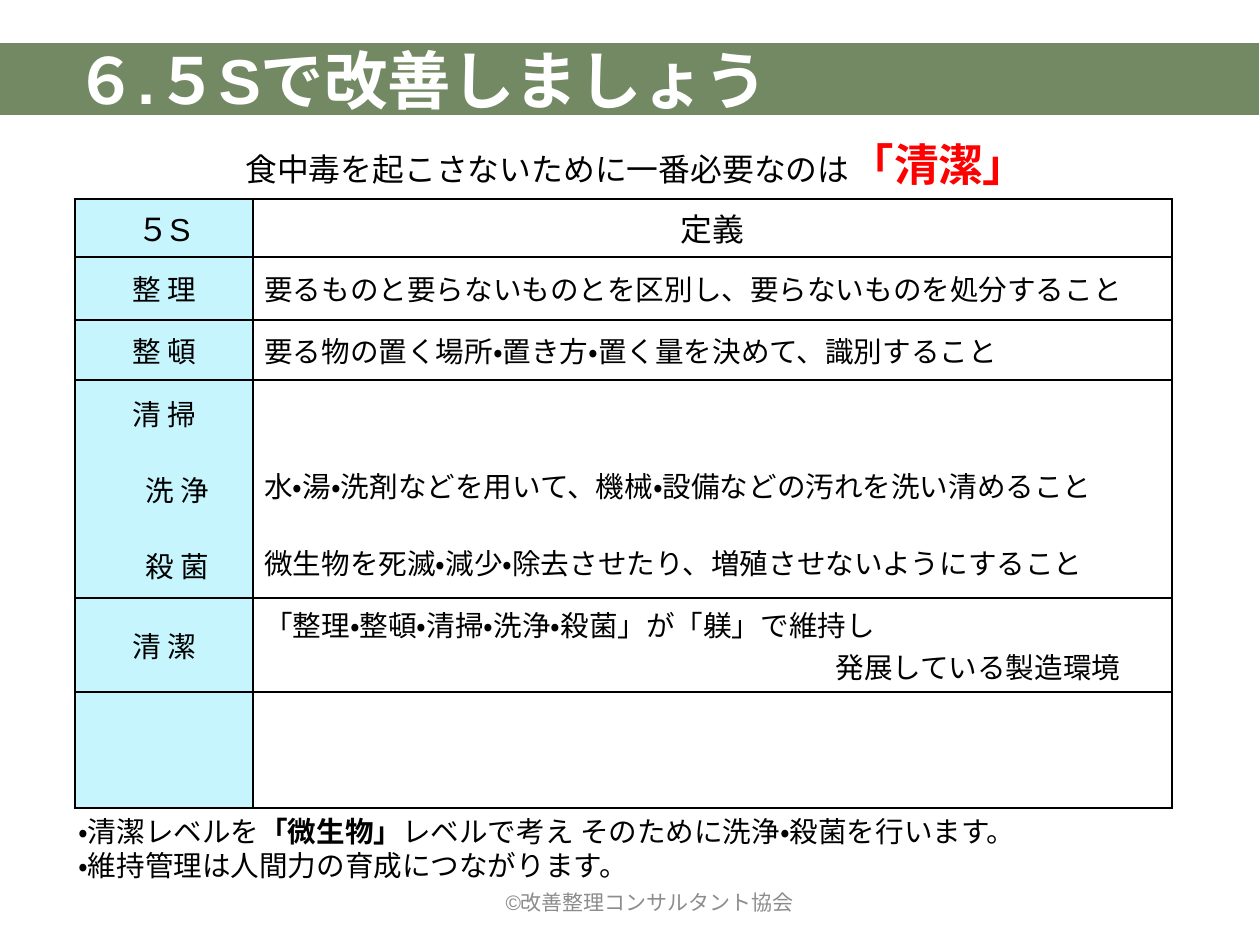
"""Build a slide that explains the five S rules of a clean workplace."""
import pptx
import pptx.dml.color
import pptx.enum.lang
import pptx.enum.text
import pptx.oxml
import pptx.oxml.ns
import pptx.util

PX = 8000
BLACK = pptx.dml.color.RGBColor(0x00, 0x00, 0x00)
WHITE = pptx.dml.color.RGBColor(0xFF, 0xFF, 0xFF)
RED = pptx.dml.color.RGBColor(0xFF, 0x00, 0x00)
GREY = pptx.dml.color.RGBColor(0x8C, 0x8C, 0x8C)
GREEN = pptx.dml.color.RGBColor(0x38, 0x57, 0x23)
PALE_BLUE = pptx.dml.color.RGBColor(0xC6, 0xF5, 0xFE)
NAMESPACE = pptx.oxml.ns.nsdecls("a")
LEFT = pptx.enum.text.PP_ALIGN.LEFT
CENTER = pptx.enum.text.PP_ALIGN.CENTER
MIDDLE = pptx.enum.text.MSO_ANCHOR.MIDDLE


def format_runs(paragraph, size, name="Calibri", color=BLACK, bold=False):
    for run in paragraph.runs:
        run.font.size = pptx.util.Pt(size)
        run.font.name = name
        run.font.bold = bold
        run.font.color.rgb = color
        run.font.language_id = pptx.enum.lang.MSO_LANGUAGE_ID.JAPANESE


def add_text(left, top, width, height):
    box = slide.shapes.add_textbox(left * PX, top * PX, width * PX, height * PX)
    box.text_frame.word_wrap = True
    return box.text_frame


presentation = pptx.Presentation()
presentation.slide_width = 1260 * PX
presentation.slide_height = 945 * PX
slide = presentation.slides.add_slide(presentation.slide_layouts[5])

title = slide.shapes.title
title.left, title.top, title.width, title.height = [n * PX for n in (-1, 43, 1260, 72)]
title.fill.solid()
title.fill.fore_color.rgb = GREEN
color_element = title.fill._xPr.find(".//" + pptx.oxml.ns.qn("a:srgbClr"))
color_element.append(pptx.oxml.parse_xml(f'<a:alpha {NAMESPACE} val="70000"/>'))
title.text_frame.text = "６.５Sで改善しましょう"
title.text_frame.auto_size = pptx.enum.text.MSO_AUTO_SIZE.NONE
title.text_frame.vertical_anchor = MIDDLE
title.text_frame.margin_left = 75 * PX
title.text_frame.paragraphs[0].alignment = LEFT
format_runs(title.text_frame.paragraphs[0], 40, "Arial", WHITE, True)

lead = add_text(234, 131, 841, 65).paragraphs[0]
for text in ("食中毒を起こさないために一番必要なのは", "「清潔」"):
    lead.add_run().text = text
format_runs(lead, 20)
keyword = lead.runs[1]
keyword.font.size = pptx.util.Pt(28)
keyword.font.bold = True
keyword.font.color.rgb = RED

rows = [
    (58, "５S", "定義"),
    (63, "整 理", "要るものと要らないものとを区別し、要らないものを処分すること"),
    (60, "整 頓", "要る物の置く場所・置き方・置く量を決めて、識別すること"),
    (218, "清 掃\n洗 浄\n殺 菌",
     "水・湯・洗剤などを用いて、機械・設備などの汚れを洗い清めること\n"
     "微生物を死滅・減少・除去させたり、増殖させないようにすること"),
    (94, "清 潔", "「整理・整頓・清掃・洗浄・殺菌」が「躾」で維持し\n発展している製造環境"),
    (116, "", ""),
]
table_height = sum(row[0] for row in rows)
frame = slide.shapes.add_table(len(rows), 2, 75 * PX, 199 * PX, 1097 * PX, table_height * PX)
table = frame.table
table.first_row = False
table.horz_banding = False
table.columns[0].width = 178 * PX
table.columns[1].width = 919 * PX
for row_index, (height, *texts) in enumerate(rows):
    table.rows[row_index].height = height * PX
    for column_index, text in enumerate(texts):
        cell = table.cell(row_index, column_index)
        cell.vertical_anchor = MIDDLE
        for side in "LRTB":
            cell._tc.get_or_add_tcPr().append(pptx.oxml.parse_xml(
                f'<a:ln{side} {NAMESPACE} w="12700"><a:solidFill>'
                f'<a:srgbClr val="{BLACK}"/></a:solidFill></a:ln{side}>'))
        if column_index == 0:
            cell.fill.solid()
            cell.fill.fore_color.rgb = PALE_BLUE
        else:
            cell.fill.background()
        if not text:
            continue
        cell.text_frame.text = text
        for paragraph in cell.text_frame.paragraphs:
            paragraph.alignment = CENTER if row_index == 0 or column_index == 0 else LEFT
            format_runs(paragraph, 20 if row_index == 0 else 18,
                        "Arial" if text == "５S" else "Calibri")

cleaning, cleaning_meaning = table.cell(3, 0), table.cell(3, 1)
cleaning_meaning.margin_top = 75 * PX
for cell in (cleaning, cleaning_meaning):
    for paragraph in cell.text_frame.paragraphs[1:]:
        paragraph.space_before = pptx.util.Pt(22)
indents = [(paragraph, 26) for paragraph in cleaning.text_frame.paragraphs[1:]]
indents.append((table.cell(4, 1).text_frame.paragraphs[1], 571))
for paragraph, indent in indents:
    paragraph._p.get_or_add_pPr().set("marL", str(indent * PX))

notes = add_text(67, 808, 1007, 81)
notes.text = "・清潔レベルを\n・維持管理は人間力の育成につながります。"
for text in ("「微生物」", "レベルで考え そのために洗浄・殺菌を行います。"):
    notes.paragraphs[0].add_run().text = text
for paragraph in notes.paragraphs:
    format_runs(paragraph, 18)
notes.paragraphs[0].runs[1].font.bold = True

copyright_line = add_text(437, 877, 425, 50)
copyright_line.text = "©改善整理コンサルタント協会"
copyright_line.vertical_anchor = MIDDLE
copyright_line.paragraphs[0].alignment = CENTER
format_runs(copyright_line.paragraphs[0], 13.2, "Arial", GREY)

presentation.save("out.pptx")
